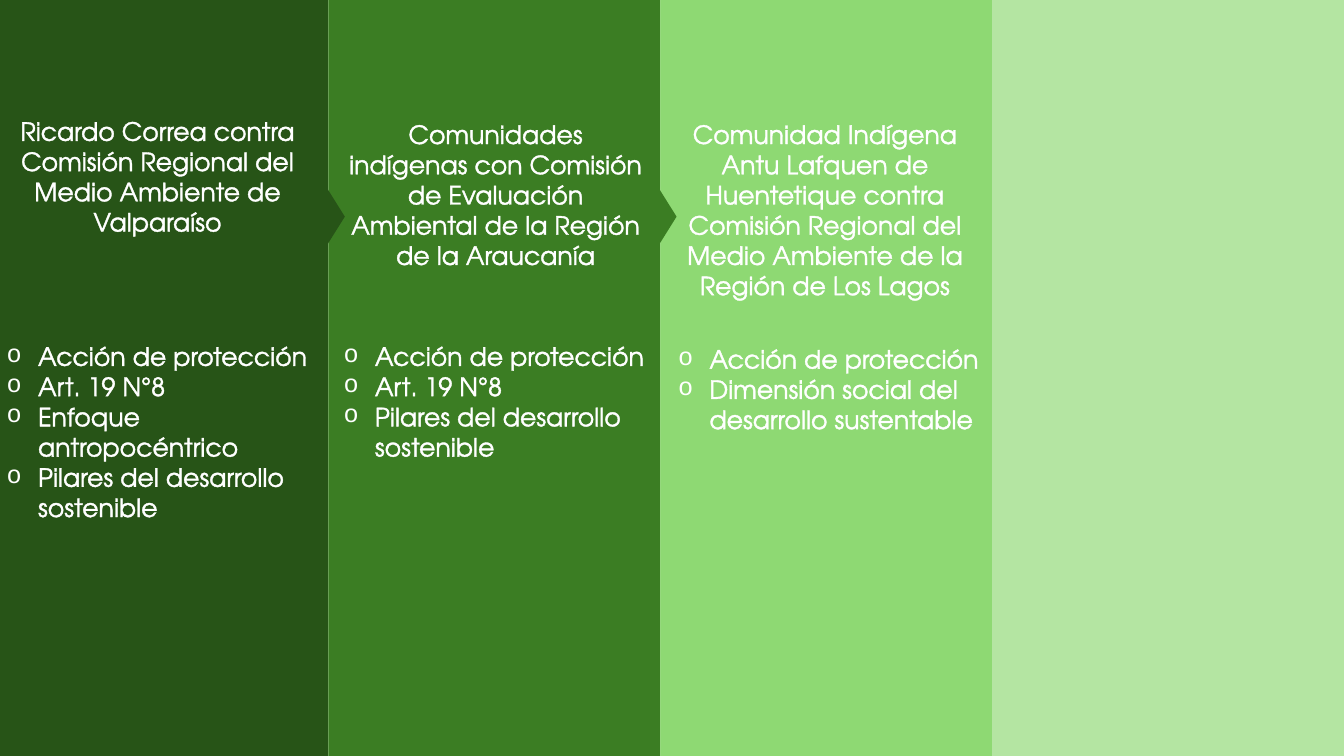
from dataclasses import dataclass

from lxml import etree
from pptx import Presentation
from pptx import util as u
from pptx.dml.color import RGBColor
from pptx.enum import shapes, text
from pptx.oxml.ns import qn

FONT = "TeX Gyre Adventor"
WHITE = "FFFFFF"
PANEL_LEFT, PANEL_WIDTH = -0.08, 8.36
SLIDE_WIDTH, SLIDE_HEIGHT = 33.87, 19.05
ARROW_LENGTH, ARROW_DEPTH, ARROW_TOP = 1.47, 0.46, 5.23
ARROW_SHIFT = 0.18
INDENT = 0.79


@dataclass
class Area:
    left: float
    top: float
    width: float
    height: float

    def lengths(self) -> list:
        return [u.Cm(n) for n in (self.left, self.top, self.width, self.height)]


@dataclass
class Case:
    color: str
    title: str
    title_area: Area
    points: list[str]
    points_area: Area


CASES = [
    Case("275417",
         "Ricardo Correa contra Comisión Regional del Medio Ambiente de Valparaíso",
         Area(0.2, 2.79, 7.54, 3.33),
         ["Acción de protección", "Art. 19 N°8", "Enfoque antropocéntrico",
          "Pilares del desarrollo sostenible"],
         Area(-0.08, 8.46, 8.74, 4.88)),
    Case("3B7D23",
         "Comunidades indígenas con Comisión de Evaluación Ambiental "
         "de la Región de la Araucanía",
         Area(8.53, 2.87, 7.92, 4.11),
         ["Acción de protección", "Art. 19 N°8", "Pilares del desarrollo sostenible"],
         Area(8.41, 8.46, 8.74, 3.33)),
    Case("8ED973",
         "Comunidad Indígena Antu Lafquen de Huentetique contra Comisión Regional "
         "del Medio Ambiente de la Región de Los Lagos",
         Area(16.56, 2.87, 8.46, 4.88),
         ["Acción de protección", "Dimensión social del desarrollo sustentable"],
         Area(16.84, 8.53, 8.36, 2.57)),
]


def paint(fill, color: str) -> None:
    fill.solid()
    fill.fore_color.rgb = RGBColor.from_string(color)


def add_block(parent, kind, area: Area, color: str):
    block = parent.add_shape(kind, *area.lengths())
    block.shadow.inherit = False
    paint(block.fill, color)
    block.line.fill.background()
    return block


def add_bullet(para) -> None:
    props = para._p.get_or_add_pPr()
    props.set("marL", str(u.Cm(INDENT)))
    props.set("indent", str(-u.Cm(INDENT)))
    etree.SubElement(props, qn("a:buFont"), typeface="Courier New")
    etree.SubElement(props, qn("a:buChar"), char="o")


def add_outline(span, color: str) -> None:
    line = etree.Element(qn("a:ln"), w=str(u.Pt(1)))
    solid = etree.SubElement(line, qn("a:solidFill"))
    etree.SubElement(solid, qn("a:srgbClr"), val=color)
    span.font._element.insert(0, line)


def add_text(parent, lines: list[str], area: Area, *, size: float = 18,
             color: str = WHITE, align=text.PP_ALIGN.LEFT, bullets: bool = False) -> None:
    box = parent.add_textbox(*area.lengths())
    frame = box.text_frame
    frame.word_wrap = True
    for index, line in enumerate(lines):
        para = frame.add_paragraph() if index else frame.paragraphs[0]
        para.alignment = align
        if bullets:
            add_bullet(para)
        span = para.add_run()
        span.text = line
        span.font.name = FONT
        span.font.size = u.Pt(size)
        paint(span.font.fill, color)
        add_outline(span, color)


def add_panel(page, index: int, case: Case) -> None:
    group = page.shapes.add_group_shape().shapes
    area = Area(PANEL_LEFT + index * PANEL_WIDTH, 0, PANEL_WIDTH, SLIDE_HEIGHT)
    add_block(group, shapes.MSO_SHAPE.RECTANGLE, area, case.color)
    add_text(group, [case.title], case.title_area, align=text.PP_ALIGN.CENTER)
    add_text(group, case.points, case.points_area, bullets=True)


def add_arrow(page, index: int, color: str) -> None:
    center = PANEL_LEFT + (index + 1) * PANEL_WIDTH + ARROW_SHIFT
    area = Area(center - ARROW_LENGTH / 2, ARROW_TOP, ARROW_LENGTH, ARROW_DEPTH)
    arrow = add_block(page.shapes, shapes.MSO_SHAPE.ISOSCELES_TRIANGLE, area, color)
    arrow.rotation = 90


def main() -> None:
    deck = Presentation()
    deck.slide_width, deck.slide_height = u.Cm(SLIDE_WIDTH), u.Cm(SLIDE_HEIGHT)
    page = deck.slides.add_slide(deck.slide_layouts[6])
    paint(page.background.fill, "B4E5A2")

    # Case panels
    for index, case in enumerate(CASES):
        add_panel(page, index, case)

    # Arrows from each panel to the next
    for index, case in enumerate(CASES[:-1]):
        add_arrow(page, index, case.color)

    deck.save("out.pptx")


if __name__ == "__main__":
    main()
